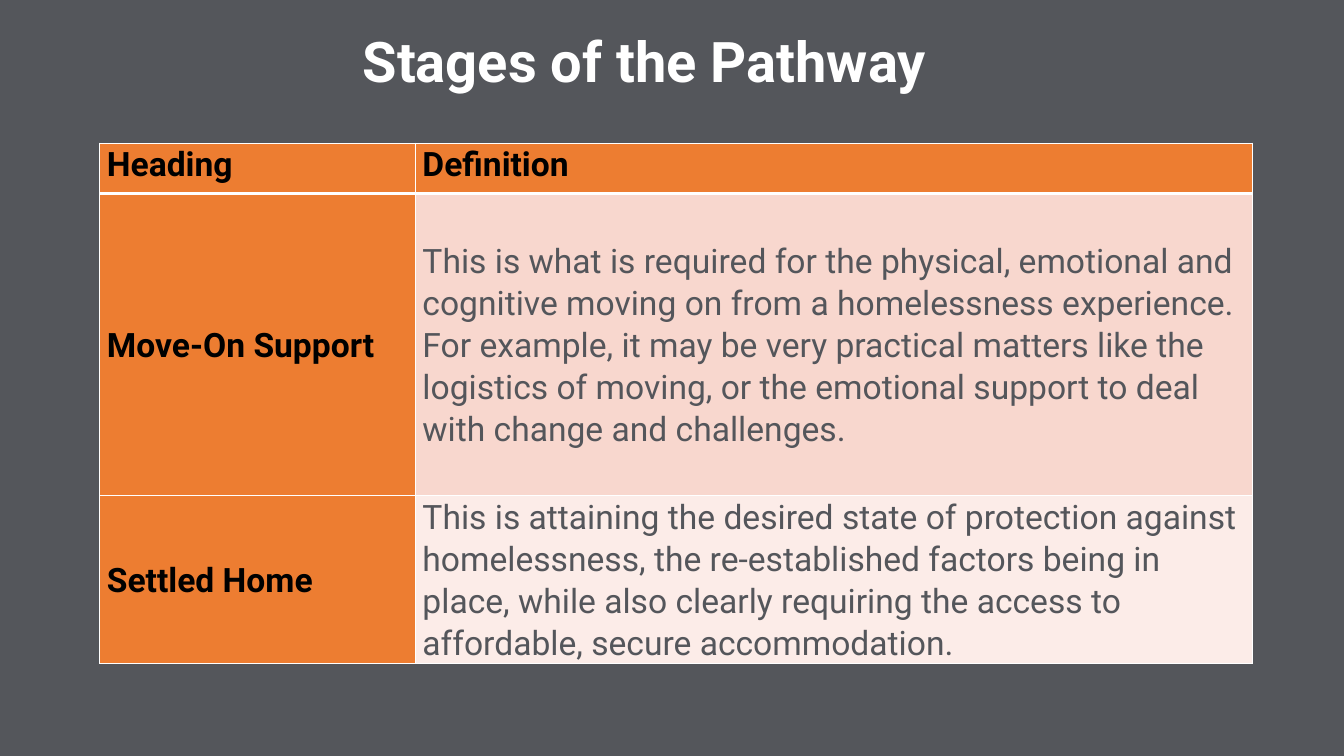
from dataclasses import dataclass

from lxml.etree import SubElement
from pptx import Presentation
from pptx.dml.color import RGBColor
from pptx.enum.text import MSO_ANCHOR, PP_ALIGN
from pptx.oxml.ns import qn
from pptx.util import Emu, Inches, Pt

SLIDE_W, SLIDE_H = Inches(13.33), Inches(7.5)


@dataclass(frozen=True)
class Theme:
    font: str = "Roboto"
    title_size: int = 40
    table_size: int = 24
    slate: str = "54565B"
    white: str = "FFFFFF"
    black: str = "000000"
    orange: str = "ED7D31"
    bands: tuple[str, ...] = ("F8D7CE", "FCECE8")
    rule: int = 1
    header_rule: int = 3


@dataclass(frozen=True)
class Row:
    heading: str
    definition: str
    height: float  # inches


THEME = Theme()
COLUMNS = (3.13, 8.3)  # inches
HEADER = Row("Heading", "Definition", 0.5)
STAGES = (
    Row("Move-On Support",
        "This is what is required for the physical, emotional and cognitive moving on "
        "from a homelessness experience. For example, it may be very practical matters "
        "like the logistics of moving, or the emotional support to deal with change "
        "and challenges.", 3),
    Row("Settled Home",
        "This is attaining the desired state of protection against homelessness, the "
        "re-established factors being in place, while also clearly requiring the access "
        "to affordable, secure accommodation.", 1.5),
)


def across(share: float) -> Emu:
    return Emu(round(SLIDE_W * share))


def down(share: float) -> Emu:
    return Emu(round(SLIDE_H * share))


def write(tf, text: str, *, size: int, color: str, bold: bool = False,
          align=PP_ALIGN.LEFT, spacing: float = 1.06) -> None:
    p = tf.paragraphs[0]
    p.alignment, p.line_spacing = align, spacing
    r = p.add_run()
    r.text = text
    r.font.name, r.font.size, r.font.bold = THEME.font, Pt(size), bold
    r.font.color.rgb = RGBColor.from_string(color)


def set_borders(cell, **widths: int) -> None:
    """Draw white rules on all four sides; widths are in points, keyed L, R, T, B."""
    tc_pr = cell._tc.get_or_add_tcPr()
    for side in "LRTB":
        ln = SubElement(tc_pr, qn(f"a:ln{side}"), w=str(Pt(widths.get(side, THEME.rule))))
        fill = SubElement(ln, qn("a:solidFill"))
        SubElement(fill, qn("a:srgbClr"), val=THEME.white)


def fill_cell(cell, text: str, *, fill: str, color: str, bold: bool,
              anchor=MSO_ANCHOR.MIDDLE, **borders: int) -> None:
    set_borders(cell, **borders)
    cell.fill.solid()
    cell.fill.fore_color.rgb = RGBColor.from_string(fill)
    cell.margin_left = cell.margin_right = Inches(0.07)
    cell.margin_top = cell.margin_bottom = 0
    cell.vertical_anchor = anchor
    write(cell.text_frame, text, size=THEME.table_size, color=color, bold=bold)


def add_stage_table(s) -> None:
    rows = (HEADER, *STAGES)
    table = s.shapes.add_table(
        len(rows), len(COLUMNS), across(0.0743), down(0.1893),
        Inches(sum(COLUMNS)), Inches(sum(row.height for row in rows))).table
    table.horz_banding = False
    for column, width in zip(table.columns, COLUMNS):
        column.width = Inches(width)
    for line, row in zip(table.rows, rows):
        line.height = Inches(row.height)

    label = dict(fill=THEME.orange, color=THEME.black, bold=True)
    for col, text in enumerate((HEADER.heading, HEADER.definition)):
        fill_cell(table.cell(0, col), text, anchor=MSO_ANCHOR.TOP,
                  B=THEME.header_rule, **label)
    for i, (stage, band) in enumerate(zip(STAGES, THEME.bands), start=1):
        top = THEME.header_rule if i == 1 else THEME.rule
        fill_cell(table.cell(i, 0), stage.heading, T=top, **label)
        fill_cell(table.cell(i, 1), stage.definition, fill=band,
                  color=THEME.slate, bold=False, T=top)


def add_title(s, text: str) -> None:
    sp = s.shapes.title
    sp.left, sp.top = across(0.1155), down(0.0093)
    sp.width, sp.height = across(0.7277), down(0.1227)
    tf = sp.text_frame
    tf.word_wrap, tf.vertical_anchor = True, MSO_ANCHOR.BOTTOM
    write(tf, text, size=THEME.title_size, color=THEME.white, bold=True,
          align=PP_ALIGN.CENTER, spacing=0.9)


def main() -> None:
    prs = Presentation()
    prs.slide_width, prs.slide_height = SLIDE_W, SLIDE_H
    s = prs.slides.add_slide(prs.slide_layouts[5])
    s.background.fill.solid()
    s.background.fill.fore_color.rgb = RGBColor.from_string(THEME.slate)
    add_title(s, "Stages of the Pathway")
    add_stage_table(s)
    prs.save("out.pptx")


if __name__ == "__main__":
    main()
